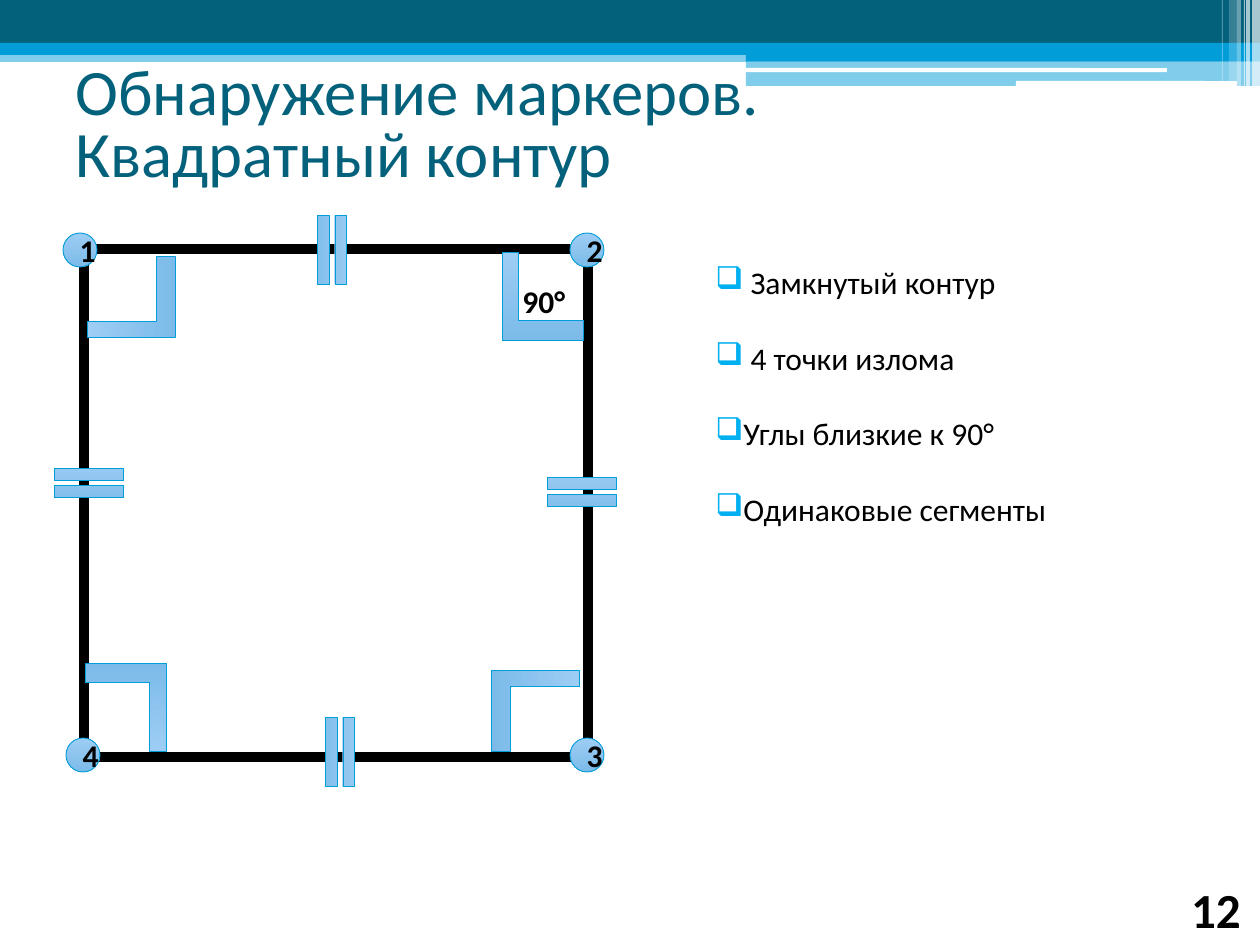
from lxml.etree import SubElement
from pptx import Presentation
from pptx.dml.color import RGBColor
from pptx.enum.shapes import MSO_SHAPE
from pptx.enum.text import MSO_ANCHOR, MSO_AUTO_SIZE, PP_ALIGN
from pptx.oxml.ns import qn
from pptx.util import Emu, Pt

PX = 914400 / 126
NAVY = RGBColor(0x04, 0x61, 0x7B)
BLUE = RGBColor(0x00, 0x9D, 0xD9)
SKY = RGBColor(0x00, 0xB0, 0xF0)
PALE_TOP = RGBColor(0x9D, 0xCD, 0xF4)
PALE_END = RGBColor(0x7C, 0xBB, 0xE9)
WHITE = RGBColor(0xFF, 0xFF, 0xFF)
BLACK = RGBColor(0, 0, 0)

BODY = {"size": Pt(18), "name": "Calibri", "bold": False}
LABEL = {**BODY, "bold": True}
NUMBER = {**LABEL, "size": Pt(28)}
HEADING = {**BODY, "size": Pt(37)}

# Header parts: box, colour, opacity in percent
BANDS = [
    ((0, 50, 1260, 12), BLUE, 50),
    ((0, 0, 1260, 43), NAVY, 100),
    ((0, 43, 1260, 12), BLUE, 100),
    ((746, 49, 514, 12), BLUE, 100),
    ((746, 61, 514, 25), BLUE, 50),
]
PILLS = [(745, 68, 422, 4), (1016, 81, 221, 5)]
# Right-edge stripes: left, width, height, opacity
STRIPES = [(1252, 8, 86, 65), (1246, 4, 86, 65), (1244, 1, 86, 60),
           (1237, 4, 86, 40), (1229, 8, 81, 20), (1222, 1, 81, 30)]

VERTICES = [("1", 63, 233), ("2", 570, 233), ("4", 66, 738), ("3", 570, 738)]
# Left, top, rotation
ANGLES = [(502, 252, 0), (91, 253, 270), (495, 667, 90), (85, 663, 180)]
TICKS = [(42, 458, 0), (535, 467, 0), (285, 225, 90), (293, 727, 90)]
CRITERIA = [" Замкнутый контур", " 4 точки излома",
            "Углы близкие к 90°", "Одинаковые сегменты"]


def px(*lengths):
    return [Emu(round(length * PX)) for length in lengths]


def add_figure(slide, preset, box, rotation=0):
    figure = slide.shapes.add_shape(preset, *px(*box))
    figure.shadow.inherit = False
    figure.rotation = rotation
    return figure


def add_band(slide, box, color, opacity=100, preset=MSO_SHAPE.RECTANGLE):
    band = add_figure(slide, preset, box)
    band.fill.solid()
    band.fill.fore_color.rgb = color
    band.line.fill.background()
    if opacity < 100:
        tint = band.fill._xPr.find(qn("a:solidFill"))[0]
        SubElement(tint, qn("a:alpha"), val=str(opacity * 1000))


def add_mark(slide, preset, box, rotation=0):
    mark = add_figure(slide, preset, box, rotation)
    mark.fill.gradient()
    mark.fill.gradient_angle = 270
    for stop, color in zip(mark.fill.gradient_stops, (PALE_TOP, PALE_END)):
        stop.color.rgb = color
    mark.line.color.rgb = BLUE
    mark.line.width = Pt(0.5)
    return mark


def write(frame, lines, style, color=BLACK, **paragraph_format):
    frame.word_wrap = True
    frame.auto_size = MSO_AUTO_SIZE.NONE
    for index, line in enumerate(lines):
        paragraph = frame.paragraphs[0] if index == 0 else frame.add_paragraph()
        for key, value in paragraph_format.items():
            setattr(paragraph, key, value)
        run = paragraph.add_run()
        run.text = line
        for key, value in style.items():
            setattr(run.font, key, value)
        run.font.color.rgb = color


def add_text(slide, box, lines, style, **paragraph_format):
    frame = slide.shapes.add_textbox(*px(*box)).text_frame
    write(frame, lines, style, **paragraph_format)
    return frame


def add_bullet(paragraph):
    properties = paragraph._p.get_or_add_pPr()
    color = SubElement(properties, qn("a:buClr"))
    SubElement(color, qn("a:srgbClr"), val=str(SKY))
    SubElement(properties, qn("a:buChar"), char="❑")


def add_header(slide):
    for box, color, opacity in BANDS:
        add_band(slide, box, color, opacity)
    for box in PILLS:
        add_band(slide, box, WHITE, preset=MSO_SHAPE.ROUNDED_RECTANGLE)
    for left, width, height, opacity in STRIPES:
        add_band(slide, (left, 0, width, height), WHITE, opacity)


def add_title(slide, lines):
    title = slide.shapes.title
    title.left, title.top, title.width, title.height = px(63, 54, 1134, 147)
    title.text_frame.vertical_anchor = MSO_ANCHOR.MIDDLE
    write(title.text_frame, lines, HEADING, NAVY,
          alignment=PP_ALIGN.LEFT, line_spacing=0.8, space_before=Pt(0))


def add_contour(slide):
    contour = add_figure(slide, MSO_SHAPE.RECTANGLE, (84, 249, 504, 508))
    contour.fill.solid()
    contour.fill.fore_color.rgb = WHITE
    contour.line.color.rgb = BLACK
    contour.line.width = Pt(6)


def add_vertex(slide, number, left, top):
    vertex = add_mark(slide, MSO_SHAPE.OVAL, (left, top, 34, 34))
    vertex.text_frame.vertical_anchor = MSO_ANCHOR.MIDDLE
    write(vertex.text_frame, [number], LABEL, alignment=PP_ALIGN.CENTER)


def add_right_angle(slide, left, top, rotation):
    preset = MSO_SHAPE.from_xml("corner")
    corner = add_mark(slide, preset, (left, top, 81, 88), rotation)
    corner.adjustments[0] = 0.24
    corner.adjustments[1] = 0.2


def add_criteria(slide):
    frame = add_text(slide, (703, 257, 473, 318), CRITERIA, BODY)
    for index, paragraph in enumerate(frame.paragraphs):
        if index:
            paragraph.line_spacing = 2.0
        add_bullet(paragraph)


def main():
    deck = Presentation()
    deck.slide_width, deck.slide_height = px(1260, 945)
    slide = deck.slides.add_slide(deck.slide_layouts[5])

    add_header(slide)
    add_title(slide, ["Обнаружение маркеров.", "Квадратный контур"])

    # Square contour with its vertices, right angles and equal sides
    add_contour(slide)
    for vertex in VERTICES:
        add_vertex(slide, *vertex)
    for angle in ANGLES:
        add_right_angle(slide, *angle)
    add_text(slide, (510, 276, 71, 50), ["90°"], LABEL)
    for left, top, rotation in TICKS:
        add_mark(slide, MSO_SHAPE.MATH_EQUAL, (left, top, 94, 50), rotation)

    # Criteria list and page number
    add_criteria(slide)
    add_text(slide, (1172, 873, 88, 72), ["12"], NUMBER,
             alignment=PP_ALIGN.CENTER)
    deck.save("out.pptx")


if __name__ == "__main__":
    main()
